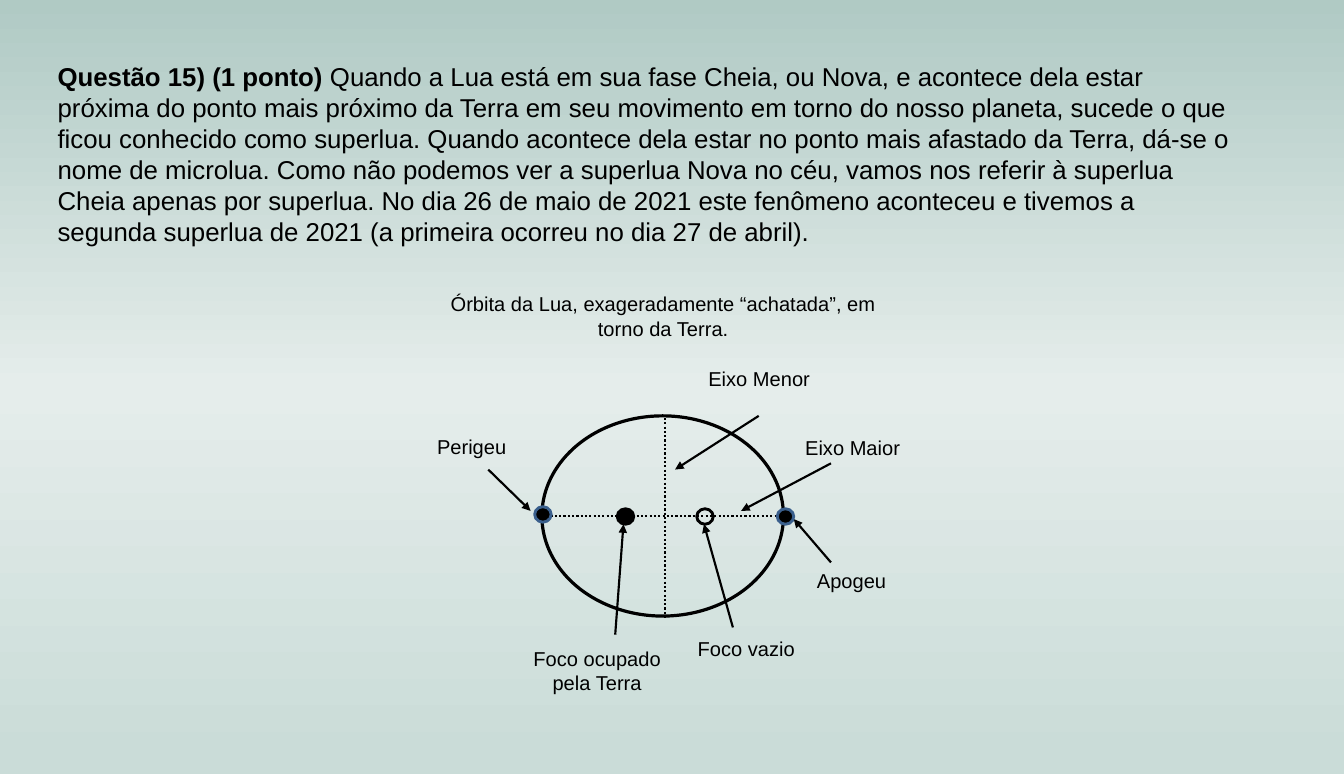
from copy import deepcopy

from pptx import Presentation
from pptx.dml.color import RGBColor
from pptx.enum.dml import MSO_LINE_DASH_STYLE as DASH
from pptx.enum.shapes import MSO_CONNECTOR, MSO_SHAPE
from pptx.enum.text import PP_ALIGN
from pptx.oxml.ns import qn
from pptx.oxml.xmlchemy import OxmlElement
from pptx.util import Inches, Pt

COLORS = {
    "ink": "000000",
    "blue": "3A5F8C",
    "top": "B0CAC4",
    "middle": "E5EDEB",
    "bottom": "CADCD8",
}
BACKGROUND = [(0, "top"), (0.5, "middle"), (0.98, "bottom")]

QUESTION = [
    ("Questão 15) (1 ponto) ", True),
    ("Quando a Lua está em sua fase Cheia, ou Nova, e acontece dela estar "
     "próxima do ponto mais próximo da Terra em seu movimento em torno do nosso "
     "planeta, sucede o que ficou conhecido como superlua. Quando acontece dela "
     "estar no ponto mais afastado da Terra, dá-se o nome de microlua. Como não "
     "podemos ver a superlua Nova no céu, vamos nos referir à superlua Cheia "
     "apenas por superlua. No dia 26 de maio de 2021 este fenômeno aconteceu e "
     "tivemos a segunda superlua de 2021 (a primeira ocorreu no dia 27 de abril).",
     False),
]
QUESTION_BOX = (0.46, 0.54, 11.63, 1.92)

# text, box (left, top, width, height)
LABELS = [
    ("Órbita da Lua, exageradamente “achatada”, em torno da Terra.",
     (4.14, 2.78, 4.57, 0.87)),
    ("Eixo Menor", (6.39, 3.5, 1.93, 0.53)),
    ("Eixo Maior", (7.35, 4.17, 1.82, 0.53)),
    ("Foco ocupado pela Terra", (4.86, 6.21, 1.85, 1.08)),
    ("Foco vazio", (6.26, 6.12, 1.94, 0.67)),
    ("Perigeu", (3.85, 4.16, 1.44, 0.53)),
    ("Apogeu", (7.53, 5.46, 1.44, 0.53)),
]
ORBIT = (5.25, 4.03, 2.34, 1.94)
AXES = [((6.44, 4.05), (6.44, 6)), ((5.25, 5), (7.59, 5))]
POINTERS = [
    ((7.35, 4.03), (6.54, 4.55)),  # eixo menor
    ((8.05, 4.49), (7.18, 4.95)),  # eixo maior
    ((5.96, 6.15), (6.04, 5.08)),  # foco ocupado
    ((7.1, 6.08), (6.82, 5.08)),   # foco vazio
    ((4.73, 4.55), (5.14, 4.95)),  # perigeu
    ((8.05, 5.45), (7.69, 5.03)),  # apogeu
]
DOT_SIZE = (0.16, 0.15)
# left, top, fill, line
DOTS = [
    (5.98, 4.93, "ink", "ink"),
    (6.75, 4.93, None, "ink"),
    (5.18, 4.91, "ink", "blue"),
    (7.53, 4.93, "ink", "blue"),
]


def rgb(name):
    return RGBColor.from_string(COLORS[name])


def inches(values):
    return [Inches(v) for v in values]


def paint_background(s):
    fill = s.background.fill
    fill.gradient()
    fill.gradient_angle = 270  # counter-clockwise, so top to bottom
    stops = s.element.find(".//" + qn("a:gsLst"))
    stops.append(deepcopy(stops[-1]))
    for stop, (position, color) in zip(fill.gradient_stops, BACKGROUND):
        stop.position = position
        stop.color.rgb = rgb(color)


def add_text(s, box, runs, size, align):
    tf = s.shapes.add_textbox(*inches(box)).text_frame
    tf.word_wrap = True
    p = tf.paragraphs[0]
    p.alignment = align
    for text, bold in runs:
        r = p.add_run()
        r.text = text
        r.font.name = "Arial"
        r.font.size = Pt(size)
        r.font.bold = bold
        r.font.color.rgb = rgb("ink")


def add_ellipse(s, box, fill, line, width):
    sp = s.shapes.add_shape(MSO_SHAPE.OVAL, *inches(box))
    sp.shadow.inherit = False
    if fill:
        sp.fill.solid()
        sp.fill.fore_color.rgb = rgb(fill)
    else:
        sp.fill.background()
    sp.line.color.rgb = rgb(line)
    sp.line.width = Pt(width)


def add_line(s, start, end, dash=None, arrow=False):
    cxn = s.shapes.add_connector(MSO_CONNECTOR.STRAIGHT, *inches(start + end))
    cxn.line.color.rgb = rgb("ink")
    cxn.line.width = Pt(1.5)
    if dash:
        cxn.line.dash_style = dash
    if arrow:
        head = OxmlElement("a:tailEnd")
        head.set("type", "triangle")
        cxn.line._get_or_add_ln().append(head)
    cxn._element.spPr.append(OxmlElement("a:effectLst"))


def main():
    prs = Presentation()
    prs.slide_width, prs.slide_height = Inches(13.02), Inches(7.5)
    s = prs.slides.add_slide(prs.slide_layouts[6])
    paint_background(s)

    add_text(s, QUESTION_BOX, QUESTION, 18, PP_ALIGN.LEFT)
    add_ellipse(s, ORBIT, None, "ink", 2.25)
    for start, end in AXES:
        add_line(s, start, end, dash=DASH.ROUND_DOT)
    for text, box in LABELS:
        add_text(s, box, [(text, False)], 14, PP_ALIGN.CENTER)
    for start, end in POINTERS:
        add_line(s, start, end, arrow=True)
    for left, top, fill, line in DOTS:
        add_ellipse(s, (left, top) + DOT_SIZE, fill, line, 2)

    prs.save("out.pptx")


if __name__ == "__main__":
    main()
